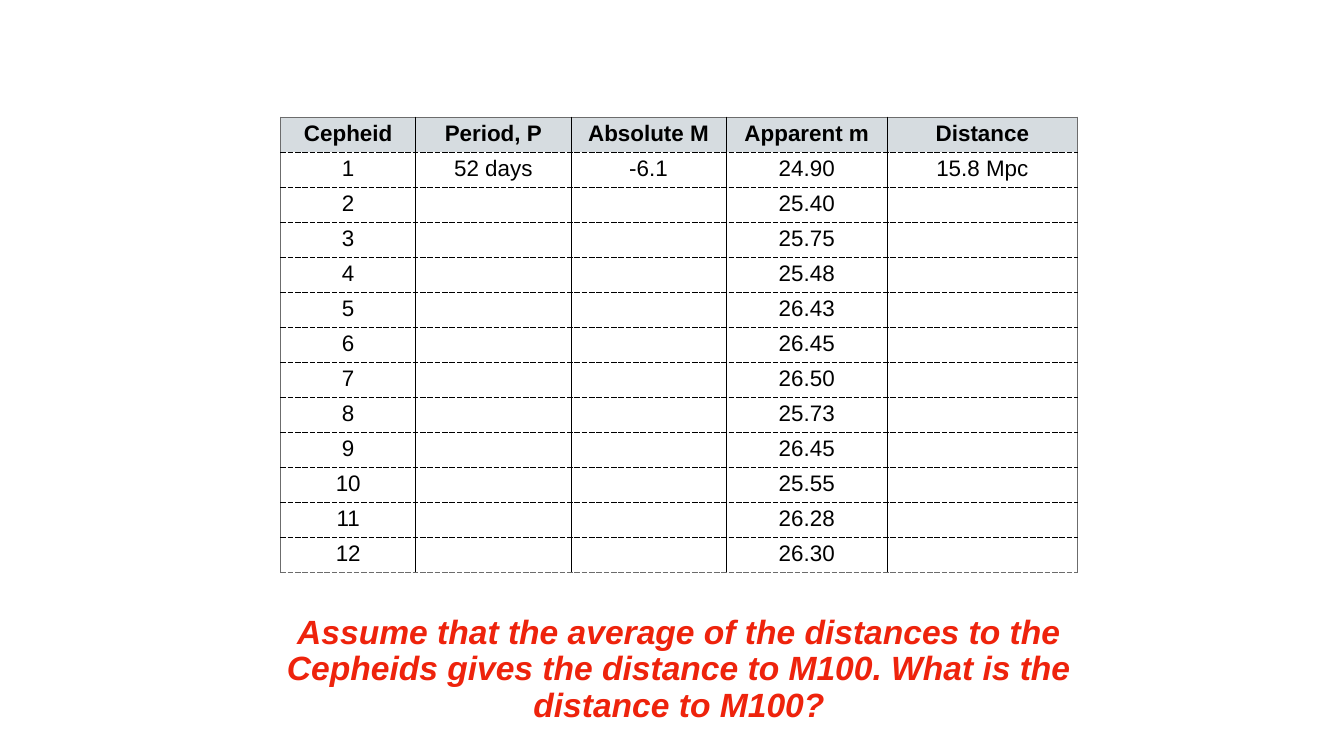
from lxml import etree
from pptx import Presentation
from pptx.dml.color import RGBColor
from pptx.enum import text as tx
from pptx.oxml.ns import qn
from pptx.util import Inches, Pt

BLACK, GREY, HEADER_FILL, RED = "000000", "6C6C6C", "D6DCE0", "EE230C"
INSET = Inches(0.06)

HEADINGS = ["Cepheid", "Period, P", "Absolute M", "Apparent m", "Distance"]
COLUMN_WIDTHS = [2.68, 3.08, 3.08, 3.2, 3.77]
APPARENT = ["24.90", "25.40", "25.75", "25.48", "26.43", "26.45",
            "26.50", "25.73", "26.45", "25.55", "26.28", "26.30"]
WORKED_EXAMPLE = ("52 days", "-6.1", "15.8 Mpc")


def color(hex_code):
    return RGBColor.from_string(hex_code)


def write(frame, words, size, hex_code=BLACK, bold=False, italic=False):
    paragraph = frame.paragraphs[0]
    paragraph.alignment = tx.PP_ALIGN.CENTER
    paragraph.line_spacing = 0.9
    run = paragraph.add_run()
    run.text = words
    font = run.font
    font.name, font.size = "Arial", Pt(size)
    font.bold, font.italic = bold, italic
    font.color.rgb = color(hex_code)


def set_border(cell, side, hex_code, dash):
    """Draw one side (L, R, T or B); call before the cell is filled."""
    line = etree.SubElement(cell._tc.get_or_add_tcPr(), qn(f"a:ln{side}"), w=str(Pt(1)))
    fill = etree.SubElement(line, qn("a:solidFill"))
    etree.SubElement(fill, qn("a:srgbClr"), val=hex_code)
    etree.SubElement(line, qn("a:prstDash"), val=dash)


def cepheid_table(slide, left, top, width, height):
    rows = [HEADINGS]
    for number, apparent in enumerate(APPARENT, 1):
        period, absolute, distance = WORKED_EXAMPLE if number == 1 else ("", "", "")
        rows.append([str(number), period, absolute, apparent, distance])
    last_row, last_column = len(rows) - 1, len(HEADINGS) - 1

    table = slide.shapes.add_table(len(rows), len(HEADINGS), Inches(left), Inches(top),
                                   Inches(width), Inches(height)).table
    table.first_row = table.horz_banding = False
    for column, column_width in zip(table.columns, COLUMN_WIDTHS):
        column.width = Inches(column_width)

    for r, values in enumerate(rows):
        for c, value in enumerate(values):
            cell = table.cell(r, c)
            cell.vertical_anchor = tx.MSO_ANCHOR.MIDDLE
            cell.margin_left = cell.margin_right = INSET
            cell.margin_top = cell.margin_bottom = INSET
            for side, outer, dash in (("L", c == 0, "solid"),
                                      ("R", c == last_column, "solid"),
                                      ("T", r == 0, "solid" if r == 0 else "dash"),
                                      ("B", r == last_row, "dash")):
                set_border(cell, side, GREY if outer else BLACK, dash)
            if r == 0:
                cell.fill.solid()
                cell.fill.fore_color.rgb = color(HEADER_FILL)
            else:
                cell.fill.background()
            if value:
                write(cell.text_frame, value, 32, bold=r == 0)


def question(slide, left, top, width, height):
    box = slide.shapes.add_textbox(Inches(left), Inches(top), Inches(width), Inches(height))
    frame = box.text_frame
    frame.word_wrap = True
    frame.vertical_anchor = tx.MSO_ANCHOR.MIDDLE
    frame.margin_left = frame.margin_right = INSET
    frame.margin_top = frame.margin_bottom = INSET
    write(frame, "Assume that the average of the distances to the Cepheids gives the "
          "distance to M100. What is the distance to M100?", 48, RED, bold=True, italic=True)


def main():
    deck = Presentation()
    deck.slide_width, deck.slide_height = Inches(26.67), Inches(15)
    slide = deck.slides.add_slide(deck.slide_layouts[6])
    cepheid_table(slide, 5.57, 2.32, sum(COLUMN_WIDTHS), 9.03)
    question(slide, 4.66, 12.12, 17.63, 2.35)
    deck.save("out.pptx")


if __name__ == "__main__":
    main()
